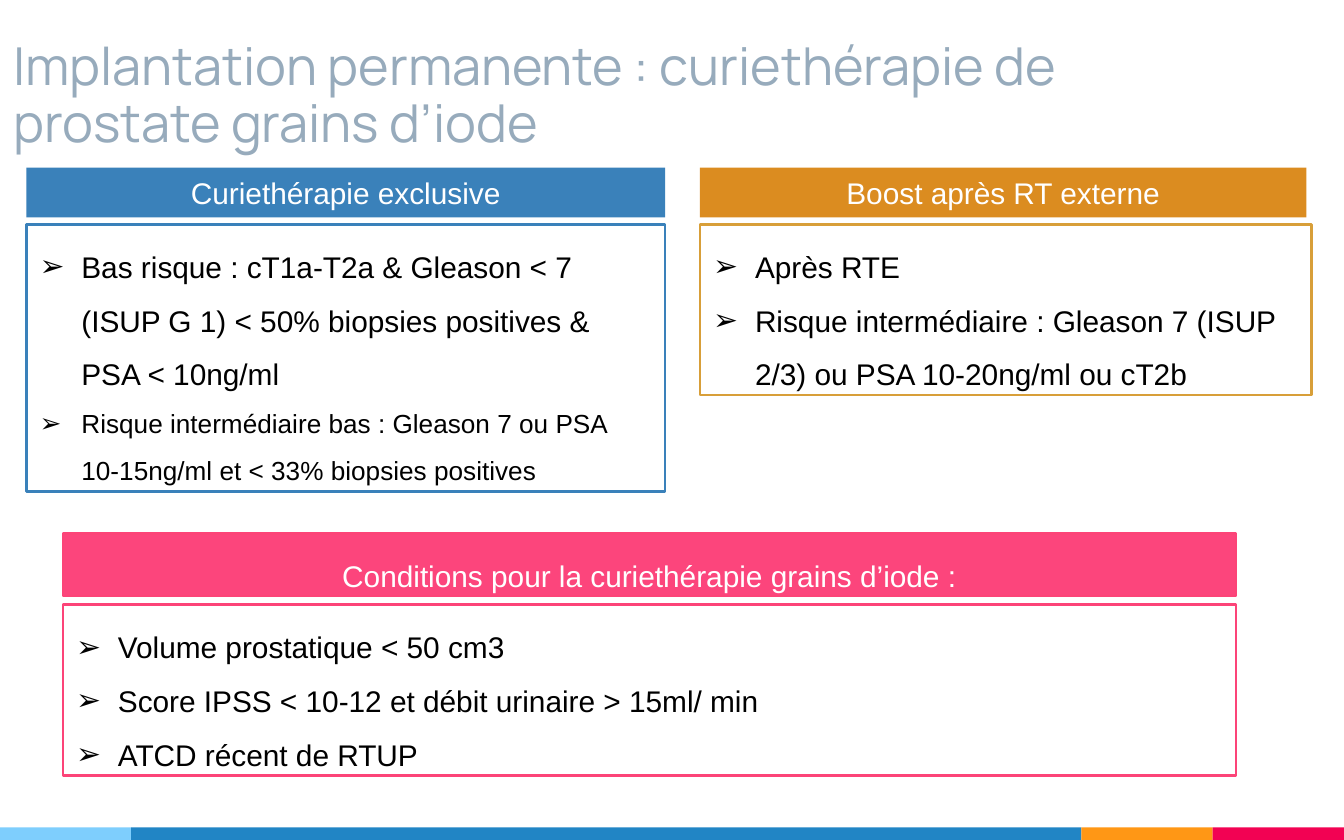
import pptx
import pptx.dml.color
import pptx.enum.shapes
import pptx.enum.text
import pptx.oxml.ns
import pptx.util
from lxml import etree

Cm, Pt = pptx.util.Cm, pptx.util.Pt
ALIGN = pptx.enum.text.PP_ALIGN
ANCHOR = pptx.enum.text.MSO_ANCHOR
AUTO = pptx.enum.text.MSO_AUTO_SIZE

COLORS = {
    "title": "97ABBC", "text": "000000", "white": "FFFFFF",
    "blue": "3A81BA", "orange": "DB8C20", "orange_line": "D89F39",
    "pink": "FC457C", "pink_line": "FC4478",
    "bar_sky": "7ECEFD", "bar_blue": "2185C5",
    "bar_orange": "FF9715", "bar_red": "F20253",
}


def rgb(name):
    return pptx.dml.color.RGBColor.from_string(COLORS[name])


def add_bullet(p, char="➢", indent=0.79):
    pPr = p._p.get_or_add_pPr()
    pPr.set("marL", str(Cm(indent)))
    pPr.set("indent", str(-Cm(indent)))
    for tag, key, value in (("a:buFont", "typeface", "Arial"), ("a:buChar", "char", char)):
        etree.SubElement(pPr, pptx.oxml.ns.qn(tag)).set(key, value)


def write(p, text, size=16, font="Arial", color="text", align=ALIGN.LEFT, spacing=1.0, bullet=False):
    if bullet:
        add_bullet(p)
    p.alignment = align
    p.line_spacing = spacing
    p.space_before = p.space_after = Pt(0)
    r = p.add_run()
    r.text = text
    r.font.size = Pt(size)
    r.font.name = font
    r.font.color.rgb = rgb(color)


class Deck:
    def __init__(self, width, height):
        self.prs = pptx.Presentation()
        self.prs.slide_width, self.prs.slide_height = Cm(width), Cm(height)
        self.slide = self.prs.slides.add_slide(self.prs.slide_layouts[5])

    def title(self, text, x, y, w, h):
        s = self.slide.shapes.title
        s.left, s.top, s.width, s.height = Cm(x), Cm(y), Cm(w), Cm(h)
        tf = s.text_frame
        tf.word_wrap = True
        tf.auto_size = AUTO.NONE
        tf.vertical_anchor = ANCHOR.BOTTOM
        tf.margin_left = tf.margin_right = tf.margin_top = tf.margin_bottom = Cm(0.25)
        write(tf.paragraphs[0], text, size=28, font="Manrope", color="title", spacing=0.9)

    def rect(self, x, y, w, h, fill=None, line=None):
        s = self.slide.shapes.add_shape(
            pptx.enum.shapes.MSO_SHAPE.RECTANGLE, Cm(x), Cm(y), Cm(w), Cm(h))
        s.shadow.inherit = False
        if fill:
            s.fill.solid()
            s.fill.fore_color.rgb = rgb(fill)
        else:
            s.fill.background()
        if line:
            s.line.color.rgb = rgb(line)
            s.line.width = Pt(1.5)
        else:
            s.line.fill.background()
        return s

    def text_frame(self, s):
        tf = s.text_frame
        tf.word_wrap = True
        tf.auto_size = AUTO.SHAPE_TO_FIT_TEXT
        tf.vertical_anchor = ANCHOR.TOP
        return tf

    def header(self, text, x, y, w, h, fill, line=None, spacing=1.0):
        tf = self.text_frame(self.rect(x, y, w, h, fill, line))
        write(tf.paragraphs[0], text, color="white", align=ALIGN.CENTER, spacing=spacing)

    def bullet_box(self, items, x, y, w, h, line):
        """Outlined box of bullets; items are (text, size) pairs."""
        tf = self.text_frame(self.rect(x, y, w, h, line=line))
        for i, (text, size) in enumerate(items):
            p = tf.add_paragraph() if i else tf.paragraphs[0]
            write(p, text, size=size, spacing=1.5, bullet=True)

    def footer_bar(self, segments, y, h):
        x = 0
        for color, w in segments:
            self.rect(x, y, w, h, color)
            x += w


def main():
    deck = Deck(25.4, 15.88)
    deck.footer_bar([("bar_sky", 2.48), ("bar_blue", 17.96),
                     ("bar_orange", 2.48), ("bar_red", 2.48)], 15.64, 0.24)
    deck.title("Implantation permanente : curiethérapie de prostate grains d’iode",
               0, 0, 23.72, 3.15)

    header_y, box_y = 3.17, 4.24
    deck.bullet_box([
        ("Bas risque : cT1a-T2a & Gleason < 7 (ISUP G 1) < 50% biopsies positives & PSA < 10ng/ml", 16),
        ("Risque intermédiaire bas : Gleason 7 ou PSA 10-15ng/ml et < 33% biopsies positives", 14),
    ], 0.5, box_y, 12.07, 5.05, "blue")
    deck.header("Curiethérapie exclusive", 0.5, header_y, 12.07, 0.94, "blue")

    deck.bullet_box([
        ("Après RTE", 16),
        ("Risque intermédiaire : Gleason 7 (ISUP 2/3) ou PSA 10-20ng/ml ou cT2b", 16),
    ], 13.23, box_y, 11.56, 3.23, "orange_line")
    deck.header("Boost après RT externe", 13.23, header_y, 11.46, 0.94, "orange")

    deck.header("Conditions pour la curiethérapie grains d’iode :",
                1.19, 10.08, 22.17, 1.19, "pink", "pink_line", spacing=1.5)
    deck.bullet_box([
        ("Volume prostatique < 50 cm3", 16),
        ("Score IPSS < 10-12 et débit urinaire > 15ml/ min", 16),
        ("ATCD récent de RTUP", 16),
    ], 1.19, 11.43, 22.17, 3.23, "pink_line")

    deck.prs.save("out.pptx")


if __name__ == "__main__":
    main()
